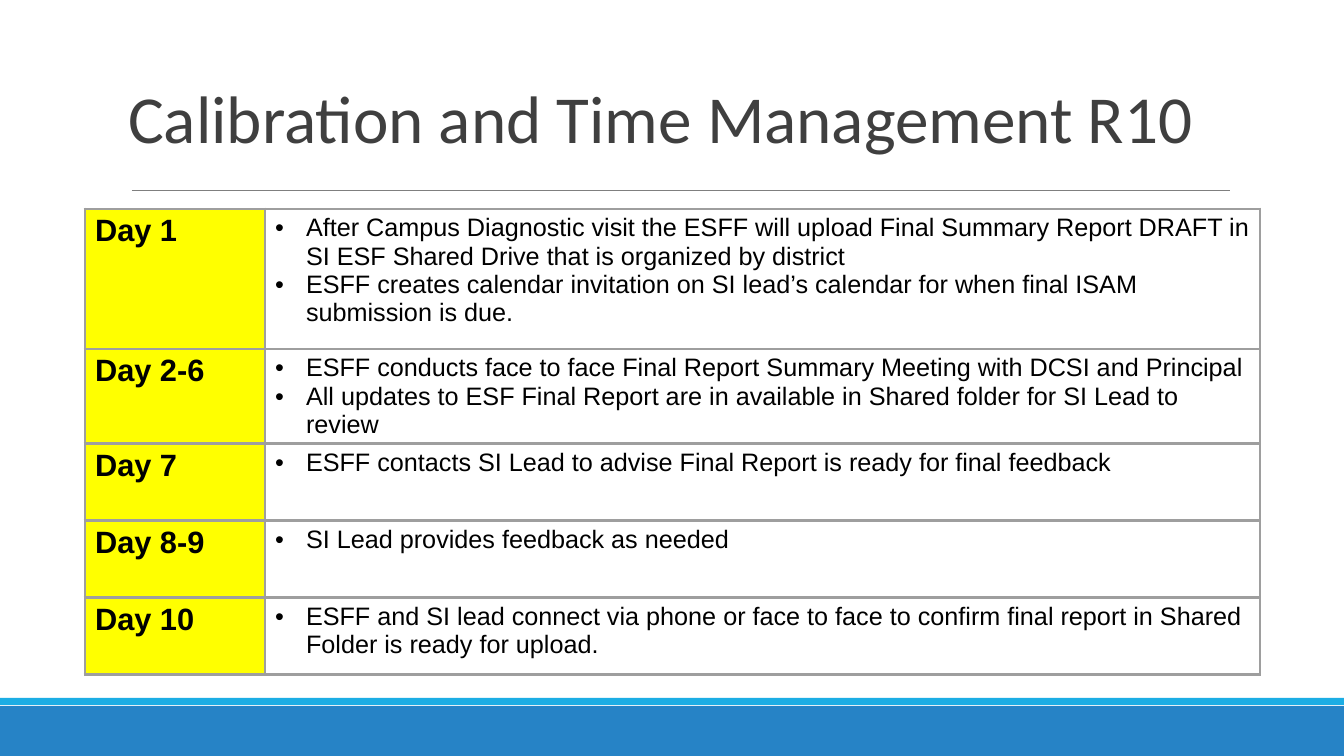
from lxml import etree
from pptx import Presentation
from pptx import util as u
from pptx.dml.color import RGBColor
from pptx.enum import shapes, text
from pptx.oxml import ns

TITLE = "Calibration and Time Management R10"
DAYS = [
    ("Day 1", [
        "After Campus Diagnostic visit the ESFF will upload Final Summary Report DRAFT in SI ESF Shared Drive that is organized by district",
        "ESFF creates calendar invitation on SI lead’s calendar for when final ISAM submission is due.",
    ]),
    ("Day 2-6", [
        "ESFF conducts face to face Final Report Summary Meeting with DCSI and Principal",
        "All updates to ESF Final Report are in available in Shared folder for SI Lead to review",
    ]),
    ("Day 7", ["ESFF contacts SI Lead to advise Final Report is ready for final feedback"]),
    ("Day 8-9", ["SI Lead provides feedback as needed"]),
    ("Day 10", [
        "ESFF and SI lead connect via phone or face to face to confirm final report in Shared Folder is ready for upload.",
    ]),
]
COLORS = {
    "title": "3F3F3F", "text": "000000", "day": "FFFF00", "grid": "9E9E9E",
    "rule": "7F7F7F", "band": "2683C6", "strip": "1CADE4",
}
WIDE, HIGH = 1344, 756
BARS = [("band", 706, 50), ("strip", 698, 7)]
COLS = [180, 995]
ROWS = [140] + [77] * 4


def px(n):
    return u.Emu(round(n * 914400 / 100.8))


def rgb(name):
    return RGBColor.from_string(COLORS[name])


def style(para, face, size, color, bold=False):
    font = para.font
    font.name, font.size, font.bold = face, u.Pt(size), bold
    font.color.rgb = rgb(color)


def add(parent, tag, **attrs):
    return etree.SubElement(parent, ns.qn(tag), attrs)


def bullet(para):
    props = para._p.get_or_add_pPr()
    props.set("marL", str(px(31)))
    props.set("indent", str(px(-34)))
    tint = add(props, "a:buClr")
    add(tint, "a:srgbClr", val=COLORS["text"])
    add(props, "a:buFont", typeface="Arial")
    add(props, "a:buChar", char="•")


def border(cell):
    props = cell._tc.get_or_add_tcPr()
    for side in "LRTB":
        edge = add(props, "a:ln" + side, w=str(u.Pt(2.25)))
        fill = add(edge, "a:solidFill")
        add(fill, "a:srgbClr", val=COLORS["grid"])


def add_bars(slide):
    for name, top, high in BARS:
        bar = slide.shapes.add_shape(
            shapes.MSO_SHAPE.RECTANGLE, 0, px(top), px(WIDE), px(high))
        bar.shadow.inherit = False
        bar.fill.solid()
        bar.fill.fore_color.rgb = rgb(name)
        bar.line.fill.background()


def add_rule(slide):
    rule = slide.shapes.add_connector(
        shapes.MSO_CONNECTOR.STRAIGHT, px(132), px(191), px(1230), px(191))
    rule.line.color.rgb = rgb("rule")
    rule.line.width = u.Pt(0.75)
    add(rule._element.spPr, "a:effectLst")


def set_title(slide):
    title = slide.shapes.title
    title.left, title.top, title.width, title.height = map(px, (118, 74, 1109, 88))
    frame = title.text_frame
    frame.text = TITLE
    frame.word_wrap = True
    frame.auto_size = text.MSO_AUTO_SIZE.NONE
    frame.vertical_anchor = text.MSO_ANCHOR.BOTTOM
    para = frame.paragraphs[0]
    para.alignment = text.PP_ALIGN.LEFT
    para.line_spacing = 0.85
    style(para, "Calibri", 48, "title")


def add_days(slide):
    table = slide.shapes.add_table(
        len(DAYS), len(COLS), px(85), px(209), px(sum(COLS)), px(sum(ROWS))).table
    table.first_row = table.horz_banding = False
    for col, wide in zip(table.columns, COLS):
        col.width = px(wide)
    for row, high, (day, tasks) in zip(table.rows, ROWS, DAYS):
        row.height = px(high)
        left, right = row.cells
        for cell in (left, right):
            border(cell)
        left.fill.solid()
        left.fill.fore_color.rgb = rgb("day")
        right.fill.background()
        left.text = day
        style(left.text_frame.paragraphs[0], "Arial", 22, "text", True)
        right.text = "\n".join(tasks)
        for para in right.text_frame.paragraphs:
            bullet(para)
            style(para, "Arial", 18, "text")


def main():
    deck = Presentation()
    deck.slide_width, deck.slide_height = px(WIDE), px(HIGH)
    slide = deck.slides.add_slide(deck.slide_layouts[5])
    add_bars(slide)
    add_rule(slide)
    set_title(slide)
    add_days(slide)
    deck.save("out.pptx")


if __name__ == "__main__":
    main()
